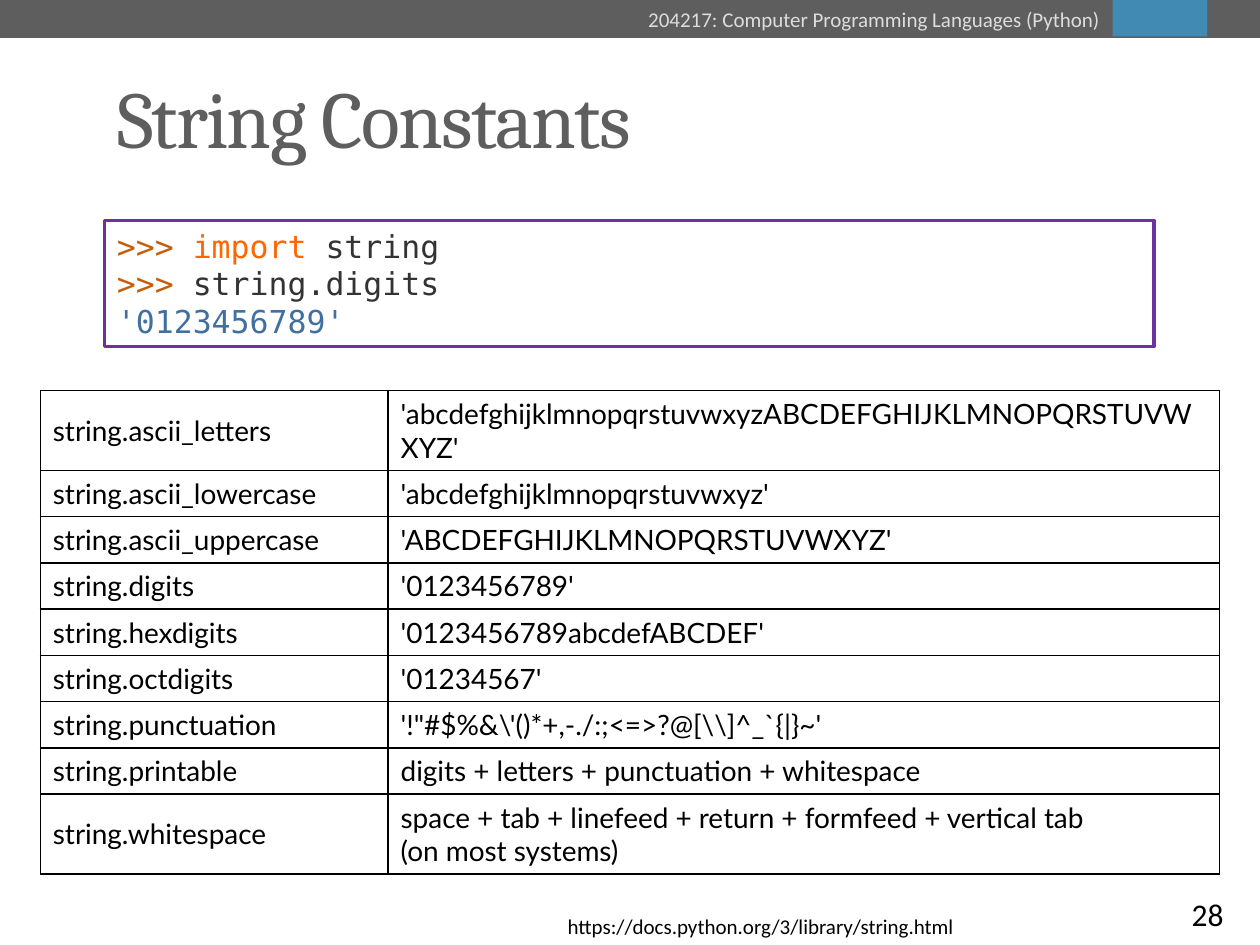
from lxml import etree
from pptx import Presentation
from pptx.dml.color import RGBColor
from pptx.enum.shapes import MSO_SHAPE
from pptx.enum.text import MSO_ANCHOR, MSO_AUTO_SIZE, PP_ALIGN
from pptx.oxml.ns import qn
from pptx.util import Inches, Pt

RECTANGLE = MSO_SHAPE.RECTANGLE
BRACKETS = MSO_SHAPE.DOUBLE_BRACKET
TOP, MIDDLE = MSO_ANCHOR.TOP, MSO_ANCHOR.MIDDLE
LEFT, CENTER, RIGHT = PP_ALIGN.LEFT, PP_ALIGN.CENTER, PP_ALIGN.RIGHT
NO_AUTOFIT = MSO_AUTO_SIZE.NONE

GRAY, BLACK, WHITE = "5E5E5E", "000000", "FFFFFF"
PROMPT, KEYWORD, CODE, RESULT = "C65D09", "FF6600", "333333", "4070A0"

CODE_LINES = [
    [(">>> ", PROMPT), ("import ", KEYWORD), ("string", CODE)],
    [(">>> ", PROMPT), ("string.digits", CODE)],
    [("'0123456789'", RESULT)],
]

CONSTANTS = [
    ("string.ascii_letters", "'abcdefghijklmnopqrstuvwxyzABCDEFGHIJKLMNOPQRSTUVWXYZ'"),
    ("string.ascii_lowercase", "'abcdefghijklmnopqrstuvwxyz'"),
    ("string.ascii_uppercase", "'ABCDEFGHIJKLMNOPQRSTUVWXYZ'"),
    ("string.digits", "'0123456789'"),
    ("string.hexdigits", "'0123456789abcdefABCDEF'"),
    ("string.octdigits", "'01234567'"),
    ("string.punctuation", r"""'!"#$%&\'()*+,-./:;<=>?@[\\]^_`{|}~'"""),
    ("string.printable", "digits + letters + punctuation + whitespace"),
    ("string.whitespace",
     "space + tab + linefeed + return + formfeed + vertical tab\n(on most systems)"),
]


def rgb(color):
    return RGBColor.from_string(color)


def inches(box):
    return [Inches(length) for length in box]


def write(frame, lines, font, size, align=LEFT, anchor=MIDDLE):
    """Fill a text frame with lines, each a list of (text, color) runs."""
    settings = {"word_wrap": True, "vertical_anchor": anchor}
    for name, value in settings.items():
        setattr(frame, name, value)
    for index, line in enumerate(lines):
        paragraph = frame.paragraphs[0] if index == 0 else frame.add_paragraph()
        paragraph.alignment = align
        for text, color in line:
            run = paragraph.add_run()
            run.text = text
            for name, value in {"name": font, "size": Pt(size)}.items():
                setattr(run.font, name, value)
            run.font.color.rgb = rgb(color)


def add_box(slide, box, fill=None, line=None, line_width=1, kind=RECTANGLE):
    shape = slide.shapes.add_shape(kind, *inches(box))
    shape.shadow.inherit = False
    if fill:
        shape.fill.solid()
        shape.fill.fore_color.rgb = rgb(fill)
    else:
        shape.fill.background()
    if line:
        shape.line.color.rgb = rgb(line)
        shape.line.width = Pt(line_width)
    else:
        shape.line.fill.background()
    return shape


def add_label(slide, box, text, color):
    """Add a right-aligned line of small text."""
    frame = slide.shapes.add_textbox(*inches(box)).text_frame
    write(frame, [[(text, color)]], "Calibri", 12, RIGHT)


def add_header(slide, box, course):
    left, top, width, height = box
    accent_left = left + width - 1.17
    add_box(slide, box, GRAY)
    add_box(slide, (accent_left, top, 0.75, height - 0.01), "418AB3")
    add_label(slide, (left, 0, accent_left - left, 0.3), course, "DDDDDD")


def place_title(slide, box, text):
    title = slide.shapes.title
    title.left, title.top, title.width, title.height = inches(box)
    frame = title.text_frame
    frame.auto_size = NO_AUTOFIT
    write(frame, [[(text, GRAY)]], "Cambria", 46)
    frame.paragraphs[0].runs[0].font._element.set("spc", "-100")


def add_code(slide, box, lines):
    shape = add_box(slide, box, WHITE, "7030A0", 2)
    write(shape.text_frame, lines, "DejaVu Sans Mono", 18, anchor=TOP)


def set_borders(cell, color, width):
    properties = cell._tc.get_or_add_tcPr()
    for index, side in enumerate(("a:lnL", "a:lnR", "a:lnT", "a:lnB")):
        border = etree.Element(qn(side), w=str(Pt(width)))
        fill = etree.SubElement(border, qn("a:solidFill"))
        etree.SubElement(fill, qn("a:srgbClr"), val=color)
        properties.insert(index, border)


def add_constants_table(slide, box, rows):
    table = slide.shapes.add_table(len(rows), 2, *inches(box)).table
    table.first_row = table.horz_banding = False
    name_width = 2.76
    for column, width in zip(table.columns, (name_width, box[2] - name_width)):
        column.width = Inches(width)
    for row, texts in zip(table.rows, rows):
        row.height = Inches(0.3 * max(text.count("\n") + 1 for text in texts))
        for cell, text in zip(row.cells, texts):
            lines = [[(line, BLACK)] for line in text.split("\n")]
            write(cell.text_frame, lines, "Lato", 16)
            cell.vertical_anchor = MIDDLE
            cell.fill.background()
            set_borders(cell, BLACK, 1)


def add_page_number(slide, box, number):
    shape = add_box(slide, box, line=WHITE, line_width=1.5, kind=BRACKETS)
    shape.adjustments[0] = 0.18
    frame = shape.text_frame
    for side in ("left", "right", "top", "bottom"):
        setattr(frame, f"margin_{side}", 0)
    write(frame, [[(number, BLACK)]], "Calibri", 18, CENTER)


def main():
    presentation = Presentation()
    presentation.slide_width, presentation.slide_height = inches((10, 7.5))
    slide = presentation.slides.add_slide(presentation.slide_layouts[5])
    add_header(slide, (0, -0.02, 10, 0.32),
               "204217: Computer Programming Languages (Python)")
    place_title(slide, (0.83, 0.3, 8.33, 1.25), "String Constants")
    add_page_number(slide, (9.17, 7, 0.83, 0.5), "28")
    add_constants_table(slide, (0.32, 3.1, 9.36, 3.57), CONSTANTS)
    add_code(slide, (0.83, 1.75, 8.33, 1), CODE_LINES)
    add_label(slide, (0, 7.2, 7.67, 0.3),
              "https://docs.python.org/3/library/string.html", BLACK)
    presentation.save("out.pptx")


if __name__ == "__main__":
    main()
